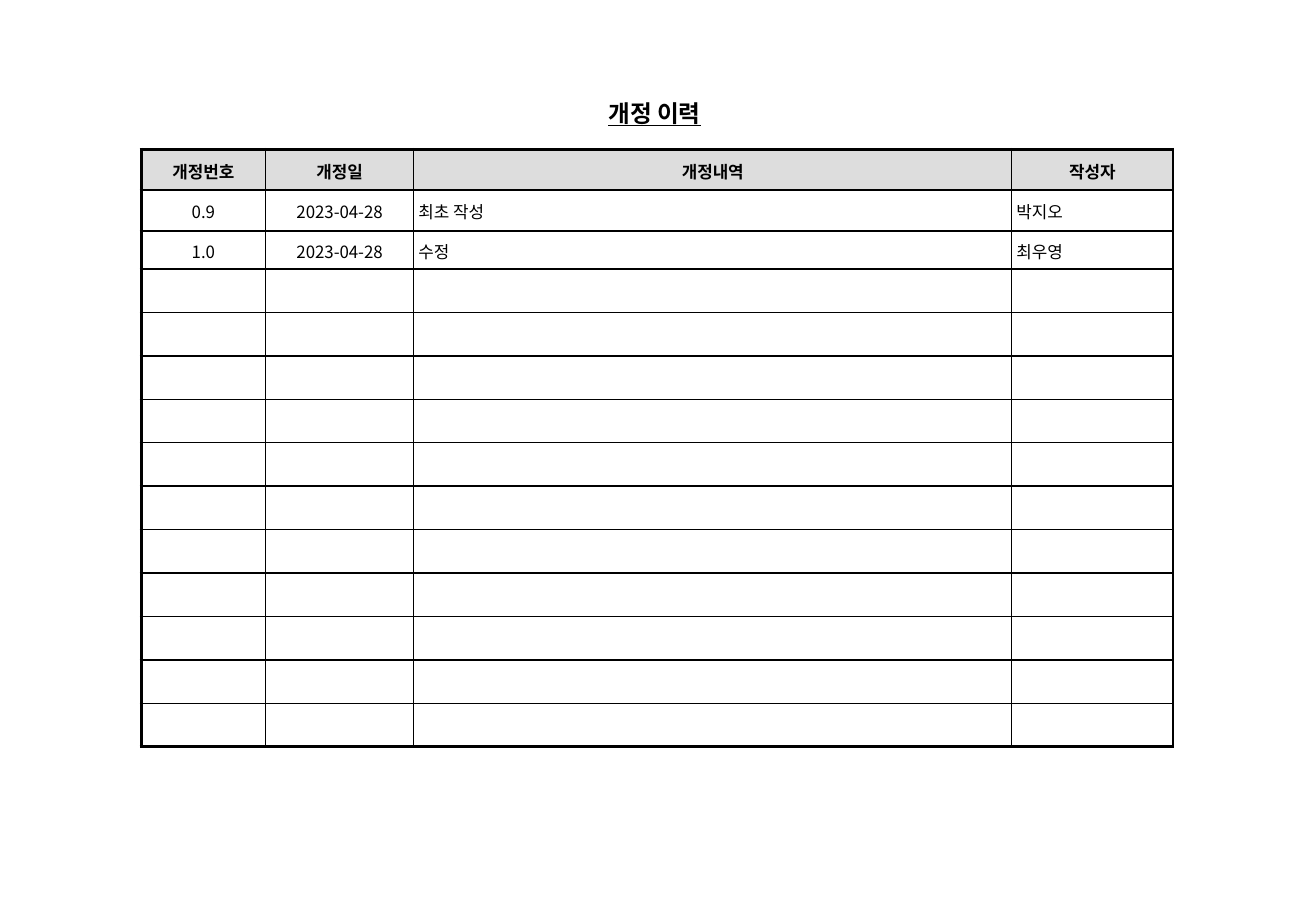
from lxml import etree
from pptx import Presentation
from pptx.dml.color import RGBColor
from pptx.enum.text import MSO_ANCHOR, PP_ALIGN
from pptx.oxml.ns import qn
from pptx.util import Pt

LEFT, CENTER = PP_ALIGN.LEFT, PP_ALIGN.CENTER
MIDDLE = MSO_ANCHOR.MIDDLE
BLACK = RGBColor(0x00, 0x00, 0x00)
HEADER_GRAY = RGBColor(0xDD, 0xDD, 0xDD)
FONT = "Noto Sans CJK KR"

# Content
TITLE = "개정 이력"
HEADERS = ("개정번호", "개정일", "개정내역", "작성자")
REVISIONS = [
    ("0.9", "2023-04-28", "최초 작성", "박지오"),
    ("1.0", "2023-04-28", "수정", "최우영"),
]
EMPTY_ROWS = 11
ALIGNMENTS = (CENTER, CENTER, LEFT, LEFT)

# Layout, in points
COLUMN_WIDTHS = (73.5, 88, 354.4, 95.7)
HEADER_HEIGHT, FIRST_HEIGHT, ROW_HEIGHT = 24, 24.3, 22.6
TABLE_LEFT, TABLE_TOP = 83.8, 88.6
CELL_MARGIN = 2.8
THIN, THICK = 1, 2.25


def write_text(frame, text, size=10, bold=False, underline=False, align=LEFT):
    paragraph = frame.paragraphs[0]
    paragraph.alignment = align
    run = paragraph.add_run()
    run.text = text
    font = run.font
    font.size, font.bold, font.underline = Pt(size), bold, underline
    font.color.rgb = BLACK
    font.name = FONT
    etree.SubElement(font._element, qn("a:ea"), typeface=FONT)
    return paragraph


def set_borders(cell, **widths):
    properties = cell._tc.get_or_add_tcPr()
    for side in "LRTB":
        line = etree.SubElement(properties, qn(f"a:ln{side}"), w=str(Pt(widths[side])))
        fill = etree.SubElement(line, qn("a:solidFill"))
        etree.SubElement(fill, qn("a:srgbClr"), val=str(BLACK))


def add_revision_table(slide):
    rows = [HEADERS, *REVISIONS] + [("",) * len(HEADERS)] * EMPTY_ROWS
    heights = [HEADER_HEIGHT, FIRST_HEIGHT] + [ROW_HEIGHT] * (len(rows) - 2)
    table = slide.shapes.add_table(
        len(rows), len(HEADERS), Pt(TABLE_LEFT), Pt(TABLE_TOP),
        Pt(sum(COLUMN_WIDTHS)), Pt(sum(heights))).table
    table.first_row = table.horz_banding = False
    for column, width in zip(table.columns, COLUMN_WIDTHS):
        column.width = Pt(width)

    for r, (values, height) in enumerate(zip(rows, heights)):
        table.rows[r].height = Pt(height)
        is_header = r == 0
        for c, value in enumerate(values):
            cell = table.cell(r, c)
            cell.vertical_anchor = MIDDLE
            cell.margin_left = cell.margin_right = Pt(CELL_MARGIN)
            cell.margin_top = cell.margin_bottom = Pt(CELL_MARGIN)
            set_borders(cell, L=THICK if c == 0 else THIN, R=THIN,
                        T=THICK if is_header else THIN,
                        B=THICK if r == len(rows) - 1 else THIN)
            if is_header:
                cell.fill.solid()
                cell.fill.fore_color.rgb = HEADER_GRAY
            else:
                cell.fill.background()
            paragraph = write_text(cell.text_frame, value, bold=is_header,
                                   align=CENTER if is_header else ALIGNMENTS[c])
            if value:
                paragraph.line_spacing = 1.1
                paragraph.space_before = Pt(2)


def main():
    presentation = Presentation()
    presentation.slide_width, presentation.slide_height = Pt(780), Pt(540)
    slide = presentation.slides.add_slide(presentation.slide_layouts[6])

    # Revision table
    add_revision_table(slide)

    # Title
    title = slide.shapes.add_textbox(Pt(350), Pt(54.6), Pt(76), Pt(24.3))
    title.text_frame.word_wrap = False
    title.text_frame.vertical_anchor = MIDDLE
    write_text(title.text_frame, TITLE, size=14, bold=True, underline=True, align=CENTER)

    presentation.save("out.pptx")


if __name__ == "__main__":
    main()
